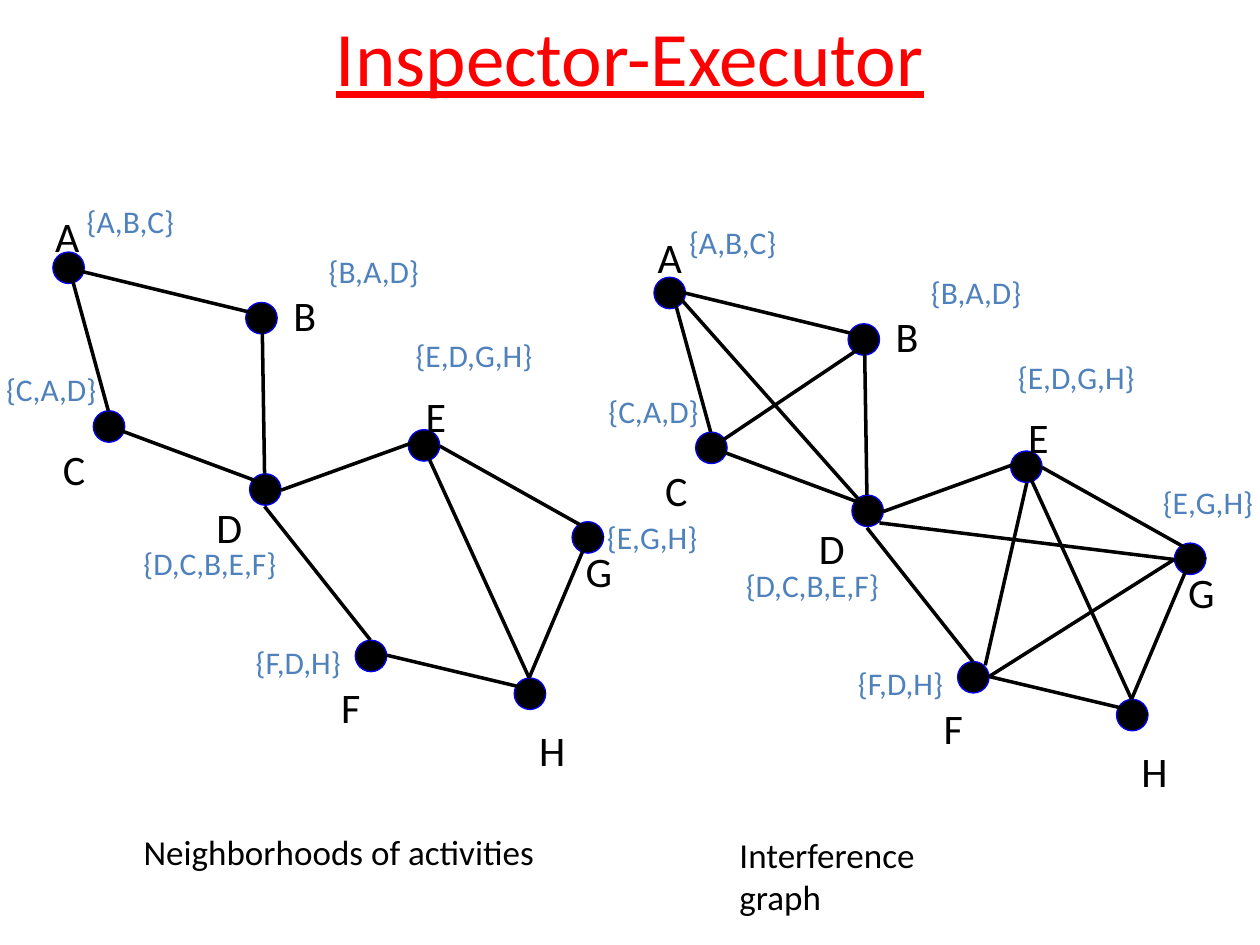
from lxml.etree import SubElement
from pptx import Presentation
from pptx.dml.color import RGBColor
from pptx.enum.shapes import MSO_CONNECTOR, MSO_SHAPE
from pptx.enum.text import MSO_ANCHOR, MSO_AUTO_SIZE, PP_ALIGN
from pptx.oxml.ns import qn
from pptx.util import Pt

COLORS = {"title": "FF0000", "ink": "000000", "outline": "0000FF", "set": "4F81BD"}
NODE_SIZE = 18

prs = Presentation()
prs.slide_width, prs.slide_height = Pt(720), Pt(540)
s = prs.slides.add_slide(prs.slide_layouts[6])


def add_text(text, x, y, w, h, size, color, wrap=False):
    box = s.shapes.add_textbox(Pt(x), Pt(y), Pt(w), Pt(h))
    tf = box.text_frame
    tf.text = text
    tf.word_wrap = wrap
    tf.auto_size = MSO_AUTO_SIZE.NONE if wrap else MSO_AUTO_SIZE.SHAPE_TO_FIT_TEXT
    font = tf.paragraphs[0].runs[0].font
    font.name, font.size = "Calibri", Pt(size)
    font.color.rgb = RGBColor.from_string(COLORS[color])
    return tf


def add_edge(x1, y1, x2, y2, arrow):
    line = s.shapes.add_connector(MSO_CONNECTOR.STRAIGHT, Pt(x1), Pt(y1), Pt(x2), Pt(y2))
    line.line.width = Pt(2)
    line.line.color.rgb = RGBColor.from_string(COLORS["ink"])
    if arrow:
        SubElement(line.line._get_or_add_ln(), qn("a:tailEnd"), type="triangle")
    SubElement(line._element.spPr, qn("a:effectLst"))


# Top-left corner of each node
nodes = {
    "A": (30.2, 144), "B": (140.4, 172.8), "C": (53.3, 234.7), "D": (142.6, 270.7),
    "E": (233.3, 245.5), "F": (203, 365.8), "G": (326.9, 298.1), "H": (293.8, 387.4),
}
# Letter: left, top, width
letters = {
    "A": (24.5, 116.6, 31), "B": (160.6, 162, 31), "C": (28.8, 249.8, 32.4),
    "D": (116.6, 283, 32.4), "E": (236.2, 219.6, 31), "F": (187.9, 385.9, 29.5),
    "G": (327.6, 308.2, 29.5), "H": (301, 410.4, 32.4),
}
# Neighborhood: left, top, width
neighborhoods = {
    "{A,B,C}": (42.5, 111.6, 64.8), "{B,A,D}": (180.7, 140.4, 66.2),
    "{C,A,D}": (-3.6, 208.1, 67), "{D,C,B,E,F}": (74.9, 307.4, 91.4),
    "{E,D,G,H}": (230.4, 188.6, 82), "{F,D,H}": (139, 363.6, 63.4),
    "{E,G,H}": (339.8, 292.3, 67),
}
edges = {
    "AB": (39.6, 153.4, 158.4, 182.2), "AC": (39.6, 153.4, 61.9, 234.7),
    "BD": (149.8, 182.2, 151.2, 270.7), "CD": (61.9, 243.4, 160.6, 280.1),
    "DE": (160.6, 280.1, 248.4, 248.4), "DF": (151.2, 289.4, 211.7, 365.8),
    "EH": (241.9, 254.9, 302.4, 387.4), "EG": (251.3, 254.9, 344.9, 307.4),
    "FH": (221, 374.4, 311.8, 396), "GH": (336.2, 307.4, 302.4, 387.4),
}
interference_edges = {
    "AD": (39.6, 152.7, 158.4, 286.6), "CB": (69.1, 239.1, 147.6, 186.5),
    "FE": (218.8, 368, 242.6, 263.6), "DG": (158.4, 286.6, 326.8, 307.5),
    "FG": (221, 374.4, 326.8, 307.5),
}
# Each graph: offset, nodes, neighborhoods, edges
graphs = [
    (0, 0, nodes, neighborhoods, edges),
    (344.2, 12.2, {**nodes, "A": (29.5, 146.2)},
     {**neighborhoods, "{E,G,H}": (313.2, 260, 67)}, {**edges, **interference_edges}),
]

tf = add_text("Inspector-Executor", 36, -13, 648, 90, 44, "title", wrap=True)
tf.vertical_anchor = MSO_ANCHOR.MIDDLE
tf.paragraphs[0].alignment = PP_ALIGN.CENTER
tf.paragraphs[0].runs[0].font.underline = True

for dx, dy, graph_nodes, graph_sets, graph_edges in graphs:
    for x, y in graph_nodes.values():
        node = s.shapes.add_shape(MSO_SHAPE.OVAL, Pt(x + dx), Pt(y + dy), Pt(NODE_SIZE), Pt(NODE_SIZE))
        node.shadow.inherit = False
        node.fill.solid()
        node.fill.fore_color.rgb = RGBColor.from_string(COLORS["ink"])
        node.line.color.rgb = RGBColor.from_string(COLORS["outline"])
        node.line.width = Pt(0.75)
    for name, (x1, y1, x2, y2) in graph_edges.items():
        add_edge(x1 + dx, y1 + dy, x2 + dx, y2 + dy, arrow=name in ("AB", "AD"))
    for text, (x, y, w) in letters.items():
        add_text(text, x + dx, y + dy, w, 36, 24, "ink")
    for text, (x, y, w) in graph_sets.items():
        add_text(text, x + dx, y + dy, w, 29, 18, "set")

add_text("Neighborhoods of activities", 75, 471, 240, 32, 20, "ink")
add_text("Interference graph", 415.5, 472.5, 158, 32, 20, "ink", wrap=True)

prs.save("out.pptx")
